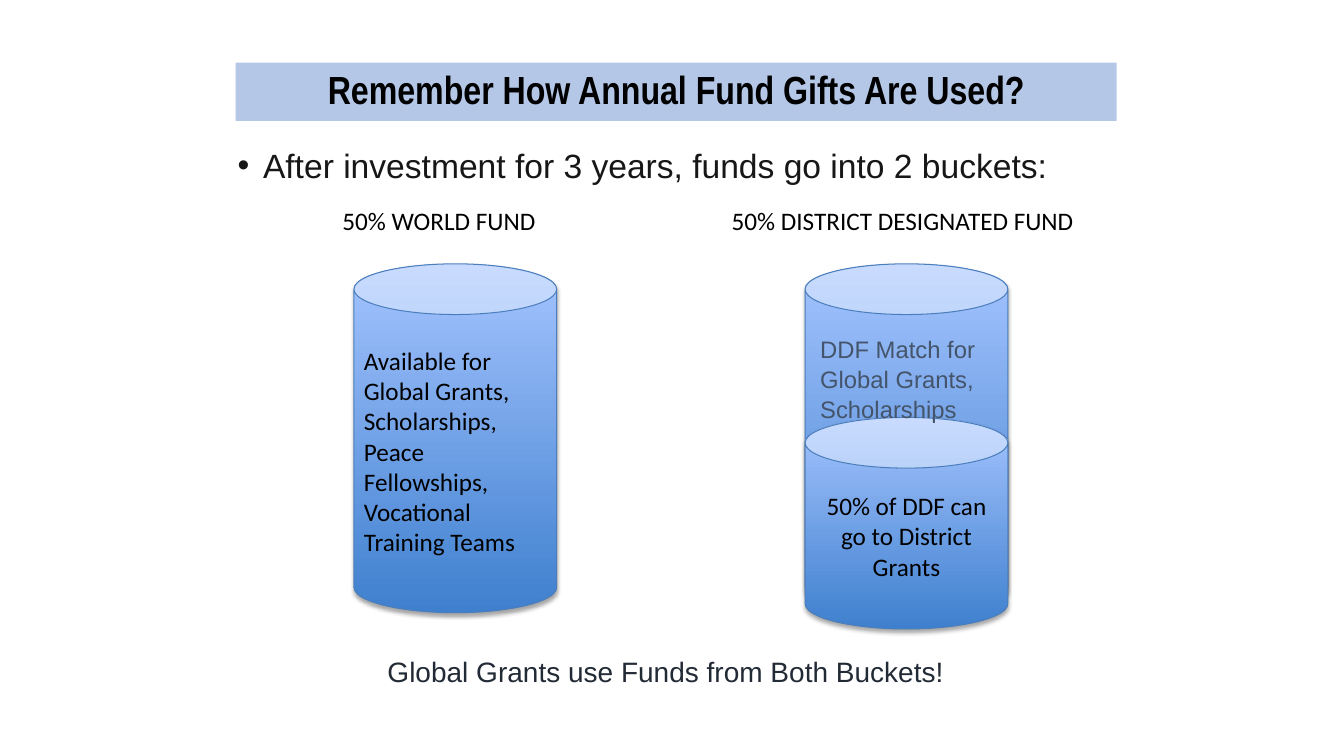
from lxml.etree import SubElement
from pptx import Presentation
from pptx.dml.color import RGBColor
from pptx.enum.shapes import MSO_SHAPE
from pptx.enum.text import MSO_ANCHOR, PP_ALIGN
from pptx.oxml.ns import qn
from pptx.util import Cm, Pt

COLORS = {
    "band": "B4C7E7", "black": "000000", "body": "181717", "match": "44546A",
    "closing": "222A35", "can_dark": "3F80CE", "can_light": "A4C4FF", "can_line": "4B7EBC",
}
LEFT, CENTER = PP_ALIGN.LEFT, PP_ALIGN.CENTER


def rgb(name):
    return RGBColor.from_string(COLORS[name])


def write(sp, text, size, font, color, align=LEFT, spacing=1.0, bold=False, anchor=MSO_ANCHOR.TOP):
    tf = sp.text_frame
    tf.word_wrap = True
    tf.vertical_anchor = anchor
    p = tf.paragraphs[0]
    p.alignment, p.line_spacing = align, spacing
    r = p.add_run()
    r.text = text
    for key, value in {"size": Pt(size), "name": font, "bold": bold}.items():
        setattr(r.font, key, value)
    r.font.color.rgb = rgb(color)
    return p


prs = Presentation()
prs.slide_width, prs.slide_height = Cm(33.87), Cm(19.05)
s = prs.slides.add_slide(prs.slide_layouts[5])

title = s.shapes.title
box = {"left": 5.94, "top": 1.58, "width": 22.2, "height": 1.47}
for key, value in box.items():
    setattr(title, key, Cm(value))
title.fill.solid()
title.fill.fore_color.rgb = rgb("band")
for side in ("left", "top", "right", "bottom"):
    setattr(title.text_frame, f"margin_{side}", 0)
write(title, "Remember How Annual Fund Gifts Are Used?", 28, "Arial Narrow", "black",
      CENTER, 0.9, True, MSO_ANCHOR.MIDDLE)

intro = s.shapes.add_textbox(Cm(5.74), Cm(3.63), Cm(22.86), Cm(1.2))
p = write(intro, "After investment for 3 years, funds go into 2 buckets:", 24, "Arial", "body", spacing=0.9)
pPr = p._p.get_or_add_pPr()
pPr.set("marL", str(Cm(0.64)))
pPr.set("indent", str(-Cm(0.64)))
SubElement(pPr, qn("a:buFont"), typeface="Arial")
SubElement(pPr, qn("a:buChar"), char="•")

WORLD_X, DISTRICT_X, CAN_W = 8.92, 20.29, 5.11
cans = [
    (WORLD_X, 6.65, 8.79, LEFT,
     "Available for Global Grants, Scholarships, Peace Fellowships, Vocational Training Teams"),
    (DISTRICT_X, 6.65, 8.79, LEFT, None),
    (DISTRICT_X, 10.52, 5.33, CENTER, "50% of DDF can go to District Grants"),
]
for x, y, h, align, text in cans:
    sp = s.shapes.add_shape(MSO_SHAPE.CAN, Cm(x), Cm(y), Cm(CAN_W), Cm(h))
    sp.fill.gradient()
    sp.fill.gradient_angle = 90
    for stop, color, position in zip(sp.fill.gradient_stops, ("can_dark", "can_light"), (0, 1)):
        stop.color.rgb = rgb(color)
        stop.position = position
    sp.line.color.rgb = rgb("can_line")
    sp.line.width = Pt(0.75)
    sp.shadow.inherit = False
    effects = sp._element.spPr.find(qn("a:effectLst"))
    shadow = SubElement(effects, qn("a:outerShdw"), blurRad=str(Pt(3.1)), dist=str(Pt(1.8)),
                        dir="5400000", rotWithShape="0")
    shade = SubElement(shadow, qn("a:srgbClr"), val=COLORS["black"])
    SubElement(shade, qn("a:alpha"), val="35000")
    if text:
        write(sp, text, 18, "Calibri", "black", align, anchor=MSO_ANCHOR.MIDDLE)

captions = [
    (8.38, 5.05, 6.2, 1.02, "50% WORLD FUND", 18, "Calibri", "black", LEFT, 1.0),
    (18.19, 5.05, 9.93, 1.02, "50% DISTRICT DESIGNATED FUND", 18, "Calibri", "black", LEFT, 1.0),
    (20.42, 8.26, 4.77, 2.44, "DDF Match for Global Grants, Scholarships", 17, "Arial", "match", LEFT, 1.06),
    (8.92, 16.36, 15.72, 1.12, "Global Grants use Funds from Both Buckets!", 20, "Arial", "closing", CENTER, 1.0),
]
for x, y, w, h, *text_format in captions:
    write(s.shapes.add_textbox(Cm(x), Cm(y), Cm(w), Cm(h)), *text_format)

prs.save("out.pptx")
